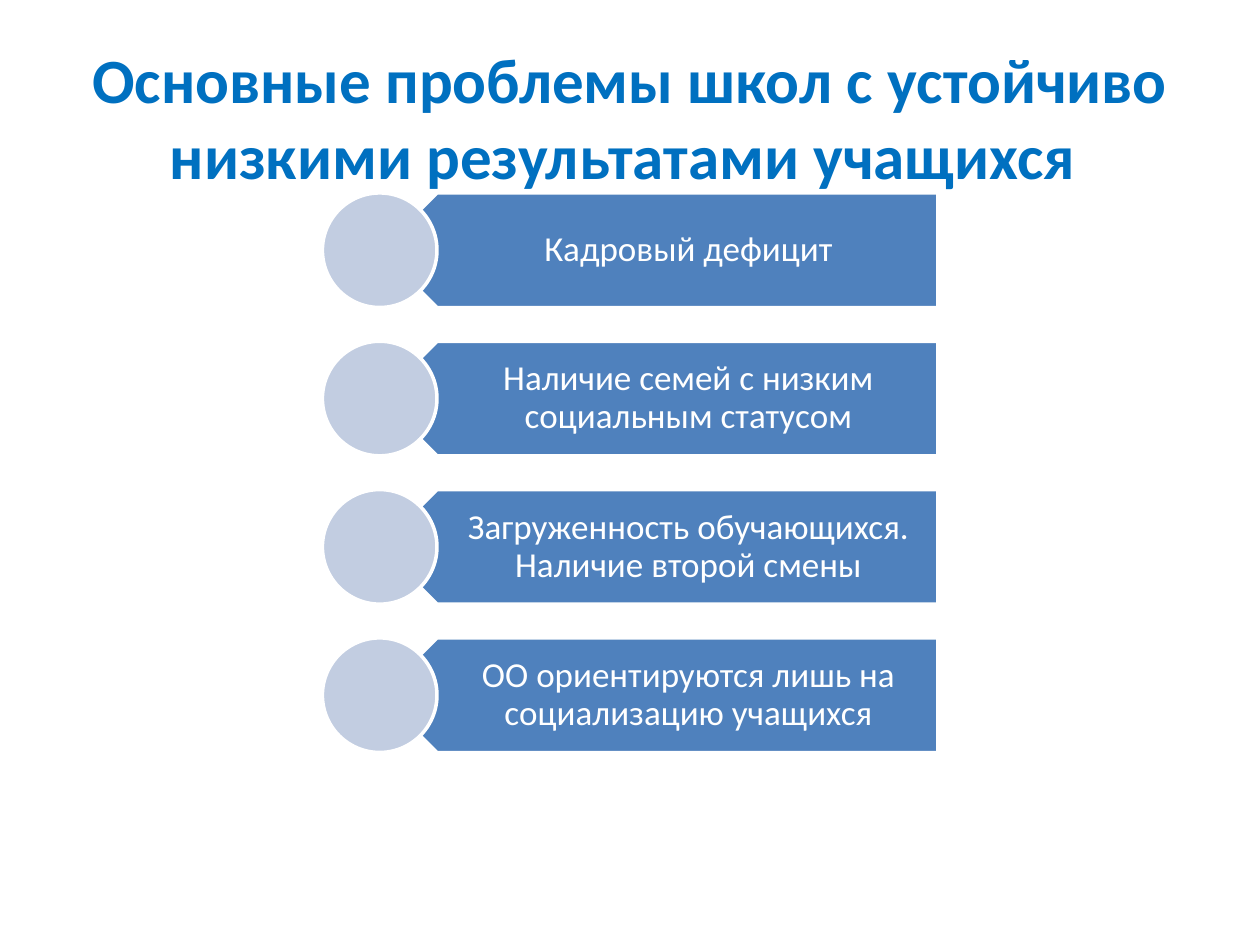
from pptx import Presentation
from pptx.dml.color import RGBColor
from pptx.enum.shapes import MSO_SHAPE
from pptx.enum.text import MSO_ANCHOR, PP_ALIGN
from pptx.util import Cm, Pt

HEADING = "Основные проблемы школ с устойчиво низкими результатами учащихся "
PROBLEMS = [
    "Кадровый дефицит",
    "Наличие семей с низким социальным статусом",
    "Загруженность обучающихся. Наличие второй смены",
    "ОО ориентируются лишь на социализацию учащихся",
]
THEME = {
    "font": "Calibri",
    "heading": RGBColor.from_string("0070C0"),
    "banner": RGBColor.from_string("4F81BD"),
    "circle": RGBColor.from_string("C2CDE1"),
    "white": RGBColor.from_string("FFFFFF"),
    "heading_size": 36,
    "problem_size": 20,
    "outline": 2,
}
FIRST_TOP, PITCH, HEIGHT = 3.89, 2.99, 2.31
CIRCLE_LEFT = 6.5
BANNER_LEFT, BANNER_WIDTH = CIRCLE_LEFT + HEIGHT / 2, 11.25
LABEL_LEFT, LABEL_WIDTH = 8.23, 10.69


def add_text(shapes, text, *, box, size, color, bold=False, spacing=1.0,
             insets=(0.25, 0.13, 0.25, 0.13)):
    """Add a centred, wrapped text box with the given format."""
    label = shapes.add_textbox(*map(Cm, box))
    frame = label.text_frame
    frame.word_wrap = True
    frame.vertical_anchor = MSO_ANCHOR.MIDDLE
    (frame.margin_left, frame.margin_top,
     frame.margin_right, frame.margin_bottom) = map(Cm, insets)
    paragraph = frame.paragraphs[0]
    paragraph.alignment = PP_ALIGN.CENTER
    paragraph.line_spacing = spacing
    run = paragraph.add_run()
    run.text = text
    run.font.name = THEME["font"]
    run.font.size = Pt(size)
    run.font.bold = bold
    run.font.color.rgb = color


def add_figure(shapes, preset, *, box, fill, rotation=0):
    """Add a filled preset shape with a white outline."""
    figure = shapes.add_shape(preset, *map(Cm, box))
    figure.rotation = rotation
    figure.shadow.inherit = False
    figure.fill.solid()
    figure.fill.fore_color.rgb = fill
    figure.line.color.rgb = THEME["white"]
    figure.line.width = Pt(THEME["outline"])


def main():
    """Build the slide and save it."""
    deck = Presentation()
    deck.slide_width, deck.slide_height = Cm(25.4), Cm(19.05)
    slide = deck.slides.add_slide(deck.slide_layouts[6])
    add_text(slide.shapes, HEADING, box=(1.27, 0.76, 22.86, 3.18),
             size=THEME["heading_size"], color=THEME["heading"], bold=True)
    problem_list = slide.shapes.add_group_shape().shapes
    for index, problem in enumerate(PROBLEMS):
        top = FIRST_TOP + index * PITCH
        add_figure(problem_list, MSO_SHAPE.PENTAGON, rotation=180,
                   box=(BANNER_LEFT, top, BANNER_WIDTH, HEIGHT), fill=THEME["banner"])
        add_text(problem_list, problem, box=(LABEL_LEFT, top, LABEL_WIDTH, HEIGHT),
                 size=THEME["problem_size"], color=THEME["white"], spacing=0.9,
                 insets=(1.02, 0.2, 0.41, 0.2))
        add_figure(problem_list, MSO_SHAPE.OVAL,
                   box=(CIRCLE_LEFT, top, HEIGHT, HEIGHT), fill=THEME["circle"])
    deck.save("out.pptx")


if __name__ == "__main__":
    main()
